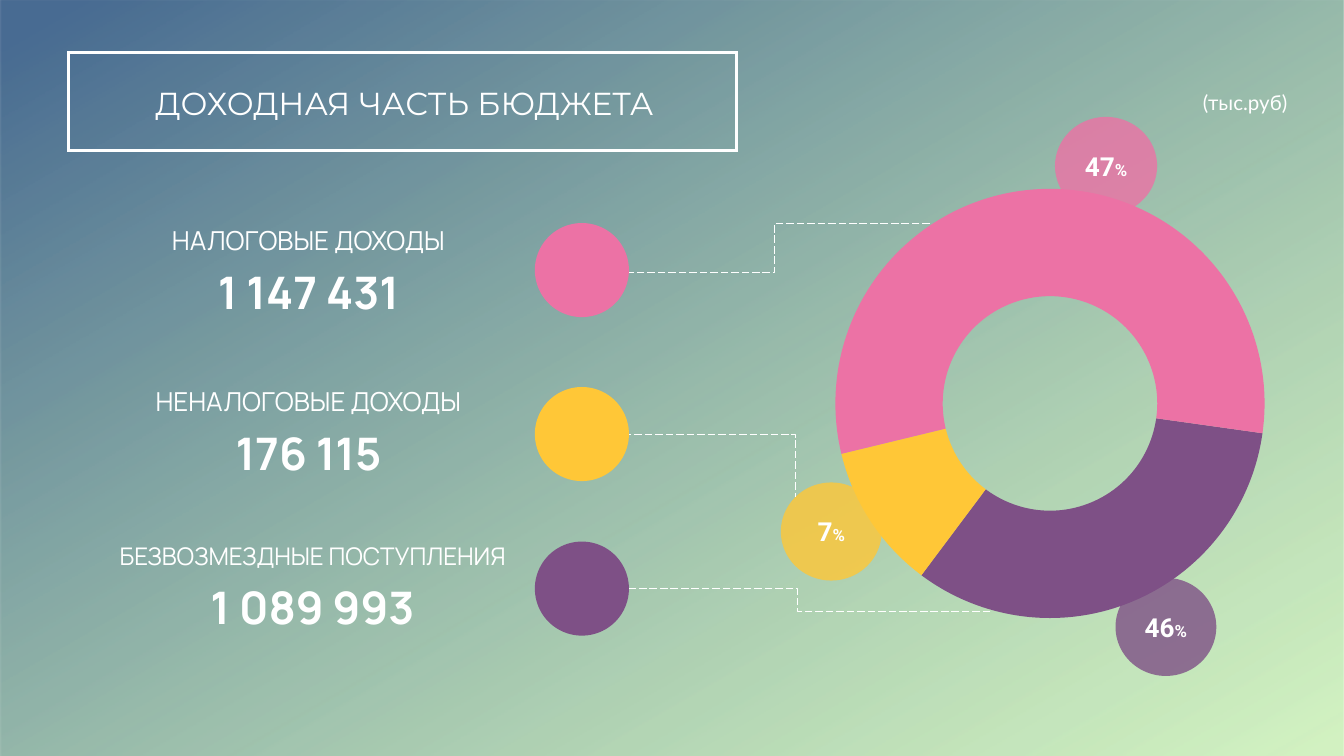
from lxml import etree
from pptx import Presentation
from pptx.chart.data import CategoryChartData
from pptx.dml.color import RGBColor
from pptx.enum.chart import XL_CHART_TYPE
from pptx.enum.dml import MSO_LINE
from pptx.enum.shapes import MSO_CONNECTOR, MSO_SHAPE
from pptx.enum.text import MSO_ANCHOR, MSO_AUTO_SIZE, PP_ALIGN
from pptx.oxml import parse_xml
from pptx.oxml.ns import nsdecls, qn
from pptx.util import Inches, Pt

RECTANGLE, OVAL = MSO_SHAPE.RECTANGLE, MSO_SHAPE.OVAL
ELBOW, DASH = MSO_CONNECTOR.ELBOW, MSO_LINE.LONG_DASH
DOUGHNUT = XL_CHART_TYPE.DOUGHNUT
CENTER, MIDDLE = PP_ALIGN.CENTER, MSO_ANCHOR.MIDDLE
FIT_TEXT = MSO_AUTO_SIZE.SHAPE_TO_FIT_TEXT

CELL = 0.1  # inches per grid column and row
COLUMNS, ROWS = 100, 56.25
WHITE, PINK, YELLOW, PURPLE = "FFFFFF", "EC72A5", "FFC737", "7E5086"
GREEN, BLUE, GREY = "BCEDA1", "486B92", "7F7F7F"


def color(value):
    return RGBColor.from_string(value)


def grid(*cells):
    return [Inches(cell * CELL) for cell in cells]


class Page:
    """Style and drawing methods for one slide on a 0.1 inch grid."""

    def __init__(self, deck):
        self.slide = deck.slides.add_slide(deck.slide_layouts[6])
        self.shapes = self.slide.shapes

    def font(self, target, name, size, bold=False, tint=WHITE):
        target.name, target.size, target.bold = name, Pt(size), bold
        target.color.rgb = color(tint)

    def shape(self, kind, at, fill=None, line=None, alpha=100):
        shape = self.shapes.add_shape(kind, *grid(*at))
        shape.shadow.inherit = False
        if fill:
            shape.fill.solid()
            shape.fill.fore_color.rgb = color(fill)
            if alpha < 100:
                tint = shape.fill._xPr.find(".//" + qn("a:srgbClr"))
                etree.SubElement(tint, qn("a:alpha"), val=str(alpha * 1000))
        else:
            shape.fill.background()
        if line:
            shape.line.color.rgb = color(line)
            shape.line.width = Pt(1.5)
            outline = shape._element.spPr.find(qn("a:ln"))
            etree.SubElement(outline, qn("a:miter"), lim="800000")
        else:
            shape.line.fill.background()
        return shape

    def backdrop(self):
        shape = self.shape(RECTANGLE, (0, 0, COLUMNS, ROWS))
        shape.rotation = 180
        gradient = parse_xml(
            f'<a:gradFill {nsdecls("a")} rotWithShape="1"><a:gsLst>'
            f'<a:gs pos="0"><a:srgbClr val="{GREEN}"><a:alpha val="65000"/></a:srgbClr></a:gs>'
            f'<a:gs pos="97000"><a:srgbClr val="{BLUE}"/></a:gs>'
            '</a:gsLst><a:lin ang="3600000" scaled="0"/></a:gradFill>')
        properties = shape._element.spPr
        properties.replace(properties.find(qn("a:noFill")), gradient)

    def text(self, at, lines, name, inset=(0.4, 0.2)):
        """Each line is (wording, size, bold)."""
        box = self.shapes.add_textbox(*grid(*at))
        frame = box.text_frame
        frame.word_wrap, frame.auto_size = True, FIT_TEXT
        frame.margin_left = frame.margin_right = grid(inset[0])[0]
        frame.margin_top = frame.margin_bottom = grid(inset[1])[0]
        for index, (wording, size, bold) in enumerate(lines):
            para = frame.add_paragraph() if index else frame.paragraphs[0]
            para.text, para.alignment = wording, CENTER
            if index:
                para.space_before = Pt(4.8)
            self.font(para.font, name, size, bold)

    def bubble(self, at, fill, share):
        frame = self.shape(OVAL, at, fill, alpha=80).text_frame
        frame.vertical_anchor = MIDDLE
        frame.margin_left = frame.margin_right = 0
        para = frame.paragraphs[0]
        para.alignment = CENTER
        for wording, size in ((share, 14), ("%", 9)):
            span = para.add_run()
            span.text = wording
            self.font(span.font, "Roboto", size, True)

    def leader(self, start, end, bends=2):
        line = self.shapes.add_connector(ELBOW, *grid(*start, *end))
        line.line.color.rgb = color(WHITE)
        line.line.width, line.line.dash_style = Pt(0.5), DASH
        properties = line._element.spPr
        properties.find(qn("a:prstGeom")).set("prst", f"bentConnector{bends + 1}")
        etree.SubElement(properties, qn("a:effectLst"))

    def doughnut(self, at, values, fills, start, hole, layout):
        data = CategoryChartData()
        data.categories = [str(number + 1) for number in range(len(values))]
        data.add_series("Series 1", values)
        chart = self.shapes.add_chart(DOUGHNUT, *grid(*at), data).chart
        chart.has_legend = chart.has_title = False
        self.font(chart.font, "Lato", 10, tint=GREY)
        plot = chart.plots[0]
        plot.vary_by_categories = True
        for index, fill in enumerate(fills):
            point = plot.series[0].points[index].format
            point.fill.solid()
            point.fill.fore_color.rgb = color(fill)
            point.line.fill.background()
        ring = plot._element
        ring.find(qn("c:firstSliceAng")).set("val", str(start))
        ring.find(qn("c:holeSize")).set("val", str(hole))
        # Fixed inner plot area, as shares of the chart
        area = ring.getparent()
        for old in area.findall(qn("c:layout")):
            area.remove(old)
        sizes = "".join(f'<c:{key} val="{share}"/>' for key, share in zip("xywh", layout))
        area.insert(0, parse_xml(
            f'<c:layout {nsdecls("c")}><c:manualLayout><c:layoutTarget val="inner"/>'
            f'<c:xMode val="edge"/><c:yMode val="edge"/>{sizes}</c:manualLayout></c:layout>'))


def main():
    deck = Presentation()
    deck.slide_width, deck.slide_height = grid(COLUMNS, ROWS)
    page = Page(deck)

    # Background and heading
    page.backdrop()
    page.shape(RECTANGLE, (5.1, 3.9, 49.7, 7.3), line=WHITE)
    page.text((6.9, 6, 46.4, 3.2), [("ДОХОДНАЯ ЧАСТЬ БЮДЖЕТА", 17, False)], "Montserrat")
    page.text((86.7, 6.5, 11.9, 2.2), [("(тыс.руб)", 11, False)], "Lato")

    # Income shares
    page.doughnut((60.4, 12.5, 35.1, 35.4), (33, 11, 56), (PURPLE, YELLOW, PINK),
                  start=98, hole=50, layout=(0.05, 0.04, 0.91, 0.91))
    page.bubble((83, 43, 7.5, 7.3), PURPLE, "46")
    page.bubble((78.5, 8.7, 7.6, 7.3), PINK, "47")
    page.bubble((58.1, 35.9, 7.5, 7.3), YELLOW, "7")

    # Leader lines from the ring to the legend
    page.leader((69.2, 16.6), (46.1, 20.3))
    page.leader((43.3, 32.3), (59.2, 37), bends=1)
    page.leader((73.7, 45.5), (45, 43.8))

    # Legend: label, amount and colour dot
    legend = (
        ("НАЛОГОВЫЕ ДОХОДЫ", "1 147 431", 14, (7.7, 15.5, 30.5, 9.6), PINK, 16.6),
        ("НЕНАЛОГОВЫЕ ДОХОДЫ", "176 115", 14, (7.7, 27.5, 30.5, 9.6), YELLOW, 28.8),
        ("БЕЗВОЗМЕЗДНЫЕ ПОСТУПЛЕНИЯ", "1 089 993", 13, (4.5, 39.1, 37.5, 9.4), PURPLE, 40.3),
    )
    for label, amount, size, at, fill, dot_top in legend:
        page.text(at, [(label, size, False), (amount, 24, True)], "Manrope", (2.4, 1.2))
        page.shape(OVAL, (39.8, dot_top, 7, 7), fill)

    deck.save("out.pptx")


if __name__ == "__main__":
    main()
